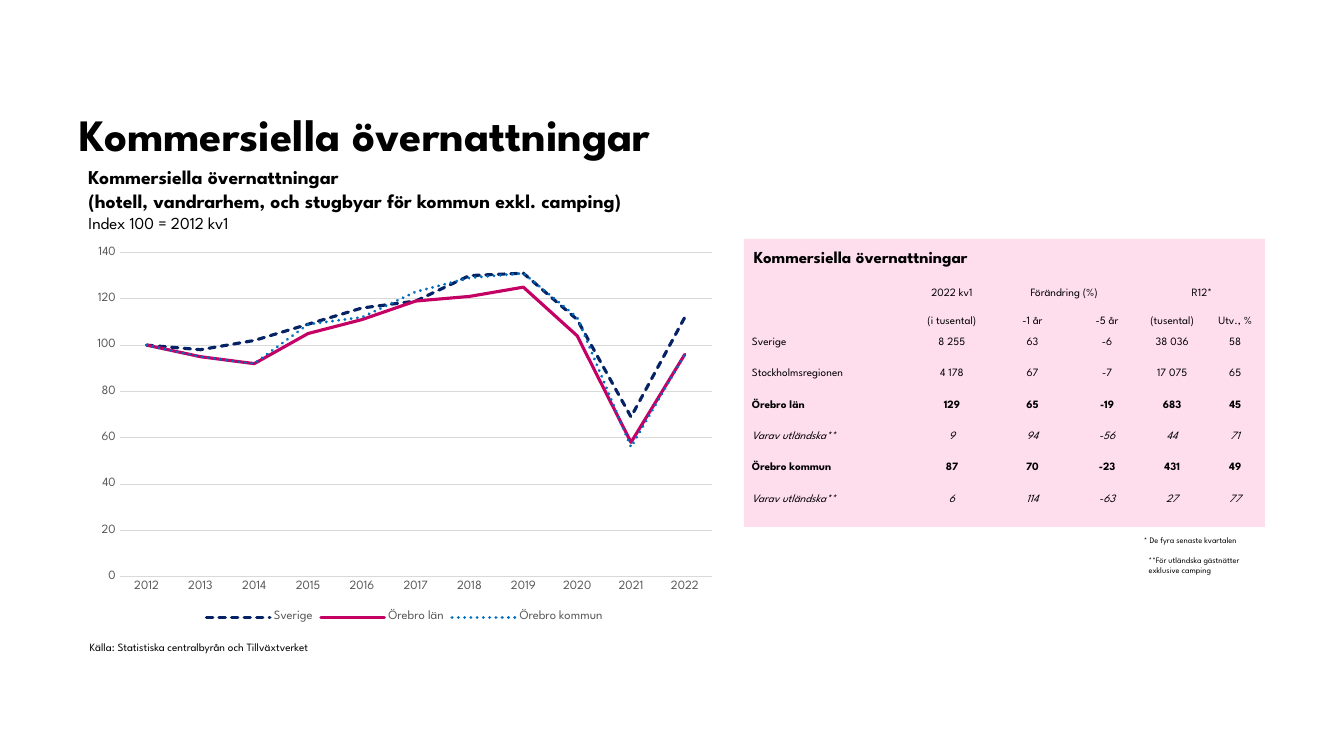
from lxml import etree
from pptx import Presentation
from pptx.chart.data import CategoryChartData
from pptx.dml.color import RGBColor
from pptx.enum.chart import XL_CHART_TYPE, XL_LEGEND_POSITION, XL_MARKER_STYLE, XL_TICK_MARK
from pptx.enum.dml import MSO_LINE
from pptx.enum.shapes import MSO_SHAPE
from pptx.enum.text import MSO_ANCHOR, PP_ALIGN
from pptx.oxml.ns import qn
from pptx.util import Cm, Pt

BLACK = RGBColor(0x00, 0x00, 0x00)
GREY = RGBColor(0x59, 0x59, 0x59)
GRID = RGBColor(0xD9, 0xD9, 0xD9)
PINK = RGBColor(0xFE, 0xDE, 0xED)
NAVY = RGBColor(0x05, 0x23, 0x64)
CERISE = RGBColor(0xC4, 0x00, 0x64)
BLUE = RGBColor(0x00, 0x6E, 0xBF)
FONT = "League Spartan"
NO_STYLE = "{2D5ABB26-0587-4C30-8999-92F81FD0307C}"
LEFT, CENTER = PP_ALIGN.LEFT, PP_ALIGN.CENTER
BOTTOM, MIDDLE = MSO_ANCHOR.BOTTOM, MSO_ANCHOR.MIDDLE
NO_TICKS = XL_TICK_MARK.NONE
SOLID, DASHED, DOTTED = MSO_LINE.SOLID, MSO_LINE.SQUARE_DOT, MSO_LINE.ROUND_DOT


def set_font(font, size, color=BLACK, **styles):
    formats = {"name": FONT, "size": Pt(size), **styles}
    for name, value in formats.items():
        setattr(font, name, value)
    font.color.rgb = color


def add_text(page, place, lines, wrap):
    """Add a text box; each line is (text, size, bold)."""
    frame = page.shapes.add_textbox(*map(Cm, place)).text_frame
    frame.word_wrap = wrap
    for number, (text, size, bold) in enumerate(lines):
        para = frame.add_paragraph() if number else frame.paragraphs[0]
        span = para.add_run()
        span.text = text
        set_font(span.font, size, bold=bold)


deck = Presentation()
deck.slide_width, deck.slide_height = Cm(33.87), Cm(19.05)
page = deck.slides.add_slide(deck.slide_layouts[5])

# Title
title = page.shapes.title
title.left, title.top, title.width, title.height = Cm(2.01), Cm(0.94), Cm(23.42), Cm(3.1)
frame = title.text_frame
frame.text = "Kommersiella övernattningar"
frame.vertical_anchor = BOTTOM
for side in ("left", "top", "right", "bottom"):
    setattr(frame, f"margin_{side}", 0)
frame.paragraphs[0].alignment = LEFT
set_font(frame.paragraphs[0].runs[0].font, 32, bold=True)

# Panel and texts
panel = page.shapes.add_shape(MSO_SHAPE.RECTANGLE, Cm(18.75), Cm(6.02), Cm(13.13), Cm(7.26))
panel.shadow.inherit = False
panel.fill.solid()
panel.fill.fore_color.rgb = PINK
panel.line.fill.background()

add_text(page, (2.01, 16, 7.04, 0.61),
         [("Källa: Statistiska centralbyrån och Tillväxtverket", 8, False)], False)
add_text(page, (18.75, 6.1, 6.1, 0.76), [("Kommersiella övernattningar", 12, True)], False)
add_text(page, (28.58, 13.36, 3.28, 0.51), [("* De fyra senaste kvartalen", 6, False)], False)
add_text(page, (28.7, 13.87, 3.28, 0.76),
         [("**För utländska gästnätter exklusive camping", 6, False)], True)
add_text(page, (1.98, 4.04, 16.13, 1.96), [
    ("Kommersiella övernattningar", 14, True),
    ("(hotell, vandrarhem, och stugbyar för kommun exkl. camping)", 14, True),
    ("Index 100 = 2012 kv1", 12, False),
], True)

# Table
PLAIN, BOLD, ITALIC = {}, {"bold": True}, {"italic": True}
HEADER_ROWS = 2
table_rows = [
    (PLAIN, ["", "2022 kv1", "Förändring (%)", "", "R12*", ""]),
    (PLAIN, ["", "(i tusental)", "-1 år", "-5 år", "(tusental)", "Utv., %"]),
    (PLAIN, ["Sverige", "8 255", "63", "-6", "38 036", "58"]),
    (PLAIN, ["Stockholmsregionen", "4 178", "67", "-7", "17 075", "65"]),
    (BOLD, ["Örebro län", "129", "65", "-19", "683", "45"]),
    (ITALIC, ["Varav utländska**", "9", "94", "-56", "44", "71"]),
    (BOLD, ["Örebro kommun", "87", "70", "-23", "431", "49"]),
    (ITALIC, ["Varav utländska**", "6", "114", "-63", "27", "77"]),
]
column_widths = [4.29, 1.9, 2.16, 1.6, 1.68, 1.5]
row_heights = [0.66, 0.69] + [0.79] * 6
table = page.shapes.add_table(len(table_rows), len(column_widths), Cm(18.75), Cm(6.88),
                              Cm(sum(column_widths)), Cm(sum(row_heights))).table
table.first_row = table.horz_banding = False
table._tbl.tblPr.find(qn("a:tableStyleId")).text = NO_STYLE
for column, width in zip(table.columns, column_widths):
    column.width = Cm(width)
for row, height in zip(table.rows, row_heights):
    row.height = Cm(height)
for first in (2, 4):
    table.cell(0, first).merge(table.cell(0, first + 1))

for r, (style, texts) in enumerate(table_rows):
    for c, text in enumerate(texts):
        cell = table.cell(r, c)
        cell.fill.background()
        cell.vertical_anchor = BOTTOM if r < HEADER_ROWS else MIDDLE
        cell.margin_left = Cm(0.02 if c else 0.2)
        cell.margin_top = cell.margin_right = Cm(0.02)
        cell.margin_bottom = 0
        para = cell.text_frame.paragraphs[0]
        para.alignment = CENTER if c else LEFT
        if text:
            span = para.add_run()
            span.text = text
            set_font(span.font, 8, **style)
        else:
            etree.SubElement(para._p, qn("a:endParaRPr"), sz="800")

# Line chart
series_rows = [
    ("Sverige", [100, 98, 102, 109, 116, 119, 130, 131, 111, 69, 112], NAVY, DASHED),
    ("Örebro län", [100, 95, 92, 105, 111, 119, 121, 125, 104, 58, 96], CERISE, SOLID),
    ("Örebro kommun", [100, 95, 92, 109, 112, 123, 129, 131, 112, 56, 96], BLUE, DOTTED),
]
data = CategoryChartData()
data.categories = [str(year) for year in range(2012, 2023)]
for name, values, color, dash in series_rows:
    data.add_series(name, values)
chart = page.shapes.add_chart(XL_CHART_TYPE.LINE, Cm(2.13), Cm(6.02), Cm(16.13), Cm(9.78),
                              data).chart
set_font(chart.font, 10)
chart.has_title = False
chart.has_legend = True
chart.legend.position = XL_LEGEND_POSITION.BOTTOM
chart.legend.include_in_layout = False
set_font(chart.legend.font, 9, GREY)

years, index = chart.category_axis, chart.value_axis
for axis in (years, index):
    axis.major_tick_mark = axis.minor_tick_mark = NO_TICKS
    set_font(axis.tick_labels.font, 9, GREY)
index.minimum_scale, index.maximum_scale, index.major_unit = 0, 140, 20
index.format.line.fill.background()
for line in (years.format.line, index.major_gridlines.format.line):
    line.color.rgb = GRID
    line.width = Pt(0.75)

chart.plots[0].vary_by_categories = False
for series, (name, values, color, dash) in zip(chart.plots[0].series, series_rows):
    series.smooth = False
    series.marker.style = XL_MARKER_STYLE.NONE
    line = series.format.line
    line.color.rgb = color
    line.width = Pt(2.25)
    line.dash_style = dash
    line._get_or_add_ln().set("cap", "rnd")

deck.save("out.pptx")
